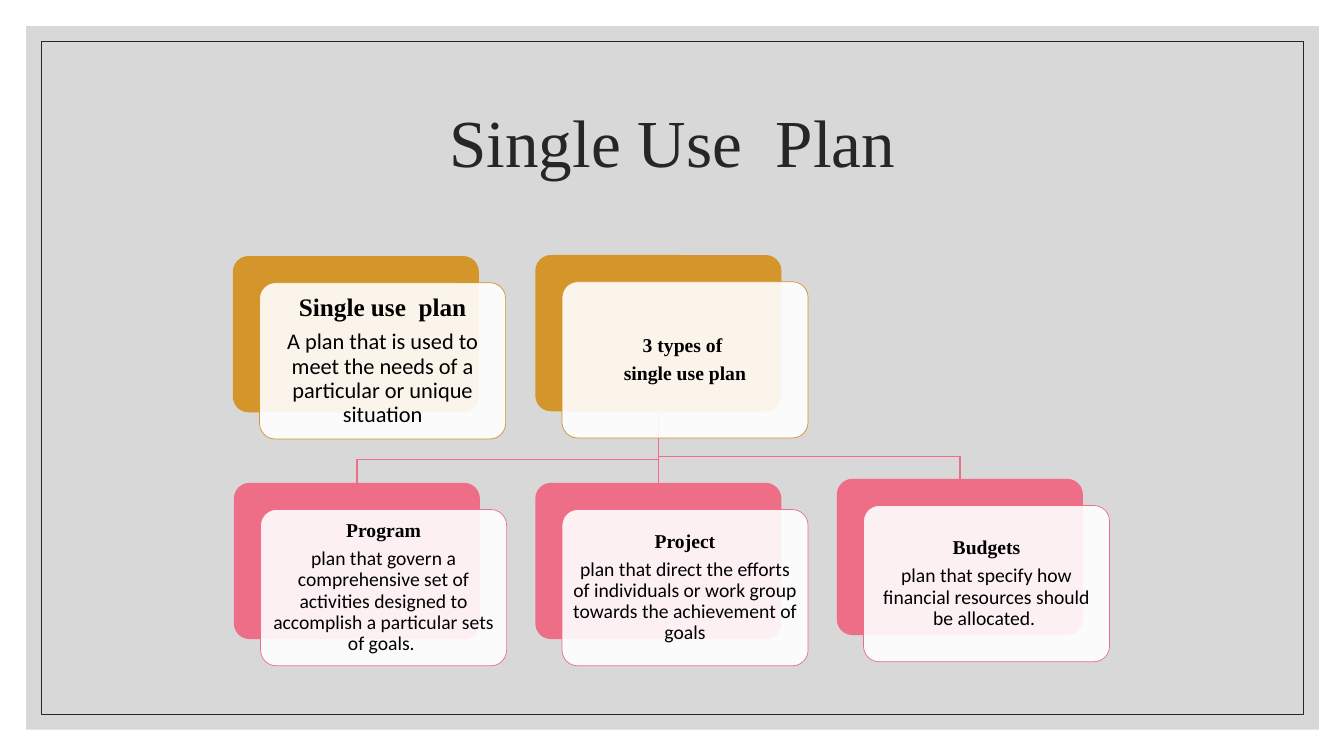
from pptx import Presentation
from pptx.dml.color import RGBColor
from pptx.enum.shapes import MSO_CONNECTOR, MSO_SHAPE
from pptx.enum.text import MSO_ANCHOR, PP_ALIGN
from pptx.oxml.ns import qn
from pptx.util import Inches, Pt
from lxml.etree import SubElement

COLORS = {
    "panel": "BFBFBF",
    "ink": "262626",
    "gold": "D4952A",
    "pink": "EE6E88",
    "white": "FFFFFF",
    "black": "000000",
}
SERIF, SANS = "Times New Roman", "Calibri"
CARD_W, CARD_H, CARD_SHIFT = 2.44, 1.55, 0.265

deck = Presentation()
deck.slide_width, deck.slide_height = Inches(13.33), Inches(7.5)
page = deck.slides.add_slide(deck.slide_layouts[6])


def add_box(kind, left, top, width, height, fill=None, line=None, line_width=0.5, opacity=100):
    """Add a preset shape; a missing fill or line colour leaves that part empty."""
    box = page.shapes.add_shape(kind, Inches(left), Inches(top), Inches(width), Inches(height))
    box.shadow.inherit = False
    if kind == MSO_SHAPE.ROUNDED_RECTANGLE:
        box.adjustments[0] = 0.1
    if fill:
        box.fill.solid()
        box.fill.fore_color.rgb = RGBColor.from_string(COLORS[fill])
        if opacity < 100:
            color = box.fill._xPr.find(qn("a:solidFill"))[0]
            SubElement(color, qn("a:alpha"), val=str(opacity * 1000))
    else:
        box.fill.background()
    if line:
        box.line.color.rgb = RGBColor.from_string(COLORS[line])
        box.line.width = Pt(line_width)
    else:
        box.line.fill.background()
    return box


def write(box, lines, inset, color):
    """Fill a box with centred paragraphs of (text, size, font, bold)."""
    frame = box.text_frame
    frame.word_wrap = True
    frame.vertical_anchor = MSO_ANCHOR.MIDDLE
    for side in ("left", "top", "right", "bottom"):
        setattr(frame, f"margin_{side}", Inches(inset))
    for number, (text, size, font, bold) in enumerate(lines):
        para = frame.add_paragraph() if number else frame.paragraphs[0]
        para.alignment = PP_ALIGN.CENTER
        para.line_spacing = 0.9
        para.space_after = Pt(round(size * 0.35, 1) if len(lines) > 1 else 0)
        span = para.add_run()
        span.text = text
        for name, value in {"size": Pt(size), "name": font, "bold": bold}.items():
            setattr(span.font, name, value)
        span.font.color.rgb = RGBColor.from_string(COLORS[color])


# Background and title
add_box(MSO_SHAPE.RECTANGLE, 0.26, 0.26, 12.82, 6.98, fill="panel", opacity=60)
add_box(MSO_SHAPE.RECTANGLE, 0.41, 0.41, 12.52, 6.68, line="ink")
title = page.shapes.add_textbox(Inches(1.17), Inches(0.7), Inches(11), Inches(1.5))
write(title, [("Single Use  Plan", 48, SERIF, False)], 0.05, "ink")

# Branches, placed behind the cards
TRUNK_X, TRUNK_TOP = 6.53, 4.08
branches = [(9.52, 4.53, 4.75), (3.54, 4.56, 4.79)]
for end_x, bend_y, end_y in branches:
    builder = page.shapes.build_freeform(Inches(TRUNK_X), Inches(TRUNK_TOP))
    corners = [(TRUNK_X, bend_y), (end_x, bend_y), (end_x, end_y)]
    builder.add_line_segments([(Inches(x), Inches(y)) for x, y in corners], close=False)
    branch = builder.convert_to_shape()
    branch.shadow.inherit = False
    branch.fill.background()
    branch.line.color.rgb = RGBColor.from_string(COLORS["pink"])
    branch.line.width = Pt(1)

trunk = page.shapes.add_connector(
    MSO_CONNECTOR.STRAIGHT, Inches(TRUNK_X), Inches(TRUNK_TOP), Inches(TRUNK_X), Inches(4.79))
trunk.line.color.rgb = RGBColor.from_string(COLORS["pink"])
trunk.line.width = Pt(1)
SubElement(trunk._element.spPr, qn("a:effectLst"))

# Cards: left, top, colour, text inset, lines
cards = {
    "definition": (2.31, 2.54, "gold", 0.07, [
        ("Single use  plan", 18, SERIF, True),
        ("A plan that is used to meet the needs of a particular or unique situation",
         16, SANS, False)]),
    "types": (5.31, 2.53, "gold", 0.06, [
        ("3 types of ", 14, SERIF, True),
        ("single use plan", 14, SERIF, True)]),
    "program": (2.32, 4.79, "pink", 0.06, [
        ("Program", 14, SERIF, True),
        ("plan that govern a comprehensive set of activities designed to "
         "accomplish a particular sets of goals. ", 14, SANS, False)]),
    "project": (5.31, 4.79, "pink", 0.06, [
        ("Project", 14, SERIF, True),
        ("plan that direct the efforts of individuals or work group "
         "towards the achievement of goals", 14, SANS, False)]),
    "budgets": (8.3, 4.75, "pink", 0.06, [
        ("Budgets", 14, SERIF, True),
        ("plan that specify how financial resources should be allocated. ",
         14, SANS, False)]),
}
backs = {}
for card, (left, top, color, inset, lines) in cards.items():
    backs[card] = add_box(
        MSO_SHAPE.ROUNDED_RECTANGLE, left, top, CARD_W, CARD_H, fill=color)
    front = add_box(
        MSO_SHAPE.ROUNDED_RECTANGLE, left + CARD_SHIFT, top + CARD_SHIFT, CARD_W, CARD_H,
        fill="white", line=color, opacity=90)
    write(front, lines, inset, "black")

trunk.begin_connect(backs["types"], 2)
trunk.end_connect(backs["project"], 0)

deck.save("out.pptx")
